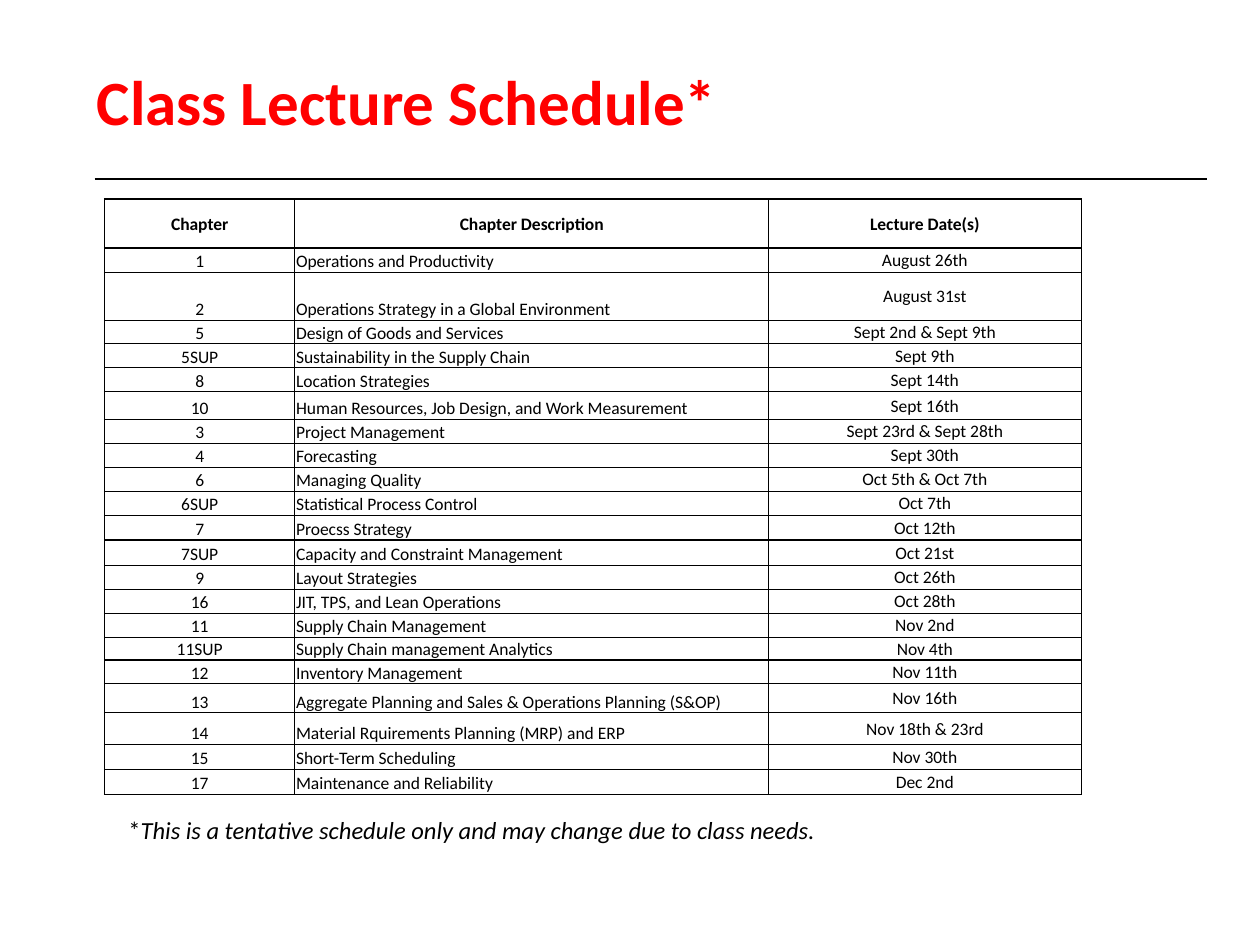
from typing import NamedTuple

import lxml.etree
import pptx
import pptx.dml.color
import pptx.enum.shapes
import pptx.enum.text
import pptx.oxml.ns
import pptx.util

Inches = pptx.util.Inches
Pt = pptx.util.Pt
Align = pptx.enum.text.PP_ALIGN
Anchor = pptx.enum.text.MSO_ANCHOR
qn = pptx.oxml.ns.qn

FONT = "Calibri"
BLACK = "000000"
RED = "FF0000"
THIN, THICK = 0.5, 1


class Lecture(NamedTuple):
    chapter: str
    description: str
    date: str
    height: float = 0.19
    ends_block: bool = False


HEADER = Lecture("Chapter", "Chapter Description", "Lecture Date(s)", 0.39, True)
LECTURES = [
    Lecture("1", "Operations and Productivity", "August 26th"),
    Lecture("2", "Operations Strategy in a Global Environment", "August 31st", 0.38),
    Lecture("5", "Design of Goods and Services", "Sept 2nd & Sept 9th"),
    Lecture("5SUP", "Sustainability in the Supply Chain", "Sept 9th"),
    Lecture("8", "Location Strategies", "Sept 14th"),
    Lecture("10", "Human Resources, Job Design, and Work Measurement", "Sept 16th", 0.22, True),
    Lecture("3", "Project Management", "Sept 23rd & Sept 28th"),
    Lecture("4", "Forecasting", "Sept 30th"),
    Lecture("6", "Managing Quality", "Oct 5th & Oct 7th"),
    Lecture("6SUP", "Statistical Process Control", "Oct 7th"),
    Lecture("7", "Proecss Strategy", "Oct 12th", 0.2, True),
    Lecture("7SUP", "Capacity and Constraint Management", "Oct 21st", 0.2),
    Lecture("9", "Layout Strategies", "Oct 26th"),
    Lecture("16", "JIT, TPS, and Lean Operations", "Oct 28th"),
    Lecture("11", "Supply Chain Management", "Nov 2nd"),
    Lecture("11SUP", "Supply Chain management Analytics", "Nov 4th", 0.18, True),
    Lecture("12", "Inventory Management", "Nov 11th"),
    Lecture("13", "Aggregate Planning and Sales & Operations Planning (S&OP)", "Nov 16th", 0.23),
    Lecture("14", "Material Rquirements Planning (MRP) and ERP", "Nov 18th & 23rd", 0.25),
    Lecture("15", "Short-Term Scheduling", "Nov 30th", 0.2),
    Lecture("17", "Maintenance and Reliability", "Dec 2nd", 0.2, True),
]


class Column(NamedTuple):
    width: float
    alignment: Align
    anchor: Anchor


COLUMNS = [
    Column(1.51, Align.CENTER, Anchor.BOTTOM),
    Column(3.76, Align.LEFT, Anchor.BOTTOM),
    Column(2.48, Align.CENTER, Anchor.MIDDLE),
]


def color(value: str) -> pptx.dml.color.RGBColor:
    return pptx.dml.color.RGBColor.from_string(value)


def set_font(paragraph, size: float, value: str = BLACK, bold: bool = False) -> None:
    font = paragraph.font
    font.name, font.size, font.bold = FONT, Pt(size), bold
    font.color.rgb = color(value)


def add_text_frame(slide, left: float, top: float, width: float, height: float):
    box = slide.shapes.add_textbox(Inches(left), Inches(top), Inches(width), Inches(height))
    box.text_frame.word_wrap = True
    return box.text_frame


def set_borders(cell, left: float, right: float, top: float, bottom: float) -> None:
    properties = cell._tc.get_or_add_tcPr()
    sides = {"a:lnL": left, "a:lnR": right, "a:lnT": top, "a:lnB": bottom}
    for position, (tag, width) in enumerate(sides.items()):
        border = lxml.etree.Element(qn(tag), w=str(Pt(width)))
        fill = lxml.etree.SubElement(border, qn("a:solidFill"))
        lxml.etree.SubElement(fill, qn("a:srgbClr"), val=BLACK)
        properties.insert(position, border)


def fill_cell(cell, text: str, alignment: Align, anchor: Anchor, bold: bool) -> None:
    cell.fill.background()
    cell.margin_left = cell.margin_right = cell.margin_top = Inches(0.01)
    cell.margin_bottom = 0
    cell.vertical_anchor = anchor
    paragraph = cell.text_frame.paragraphs[0]
    paragraph.text = text
    paragraph.alignment = alignment
    set_font(paragraph, 10, bold=bold)


def add_schedule(slide) -> None:
    rows = [HEADER, *LECTURES]
    table = slide.shapes.add_table(
        len(rows), len(COLUMNS), Inches(0.83), Inches(1.58),
        Inches(sum(column.width for column in COLUMNS)),
        Inches(sum(row.height for row in rows)),
    ).table
    table.first_row = table.horz_banding = False
    for index, column in enumerate(COLUMNS):
        table.columns[index].width = Inches(column.width)
    top = THICK
    for row_index, row in enumerate(rows):
        table.rows[row_index].height = Inches(row.height)
        bottom = THICK if row.ends_block else THIN
        header = row is HEADER
        for index, column in enumerate(COLUMNS):
            cell = table.cell(row_index, index)
            alignment = Align.CENTER if header else column.alignment
            anchor = Anchor.MIDDLE if header else column.anchor
            fill_cell(cell, row[index], alignment, anchor, header)
            set_borders(cell, THIN if index else THICK, THIN, top, bottom)
        top = bottom


def add_title(slide) -> None:
    frame = add_text_frame(slide, 0.67, 0.47, 8.5, 0.67)
    frame.vertical_anchor = Anchor.BOTTOM
    paragraph = frame.paragraphs[0]
    paragraph.text = "Class Lecture Schedule*"
    paragraph.line_spacing = 0.8
    set_font(paragraph, 36, RED, bold=True)


def add_rule(slide) -> None:
    rule = slide.shapes.add_connector(
        pptx.enum.shapes.MSO_CONNECTOR.STRAIGHT,
        Inches(0.75), Inches(1.42), Inches(9.58), Inches(1.42),
    )
    rule.line.color.rgb = color(BLACK)
    rule.line.width = Pt(0.75)
    lxml.etree.SubElement(rule._element.spPr, qn("a:effectLst"))


def add_footnote(slide) -> None:
    frame = add_text_frame(slide, 0.92, 6.42, 6.42, 0.34)
    frame.auto_size = pptx.enum.text.MSO_AUTO_SIZE.SHAPE_TO_FIT_TEXT
    paragraph = frame.paragraphs[0]
    set_font(paragraph, 14)
    paragraph.add_run().text = "*"
    note = paragraph.add_run()
    note.text = "This is a tentative schedule only and may change due to class needs."
    note.font.italic = True


def main() -> None:
    presentation = pptx.Presentation()
    presentation.slide_width = Inches(10)
    presentation.slide_height = Inches(7.5)
    slide = presentation.slides.add_slide(presentation.slide_layouts[6])
    add_rule(slide)
    add_title(slide)
    add_schedule(slide)
    add_footnote(slide)
    presentation.save("out.pptx")


if __name__ == "__main__":
    main()
